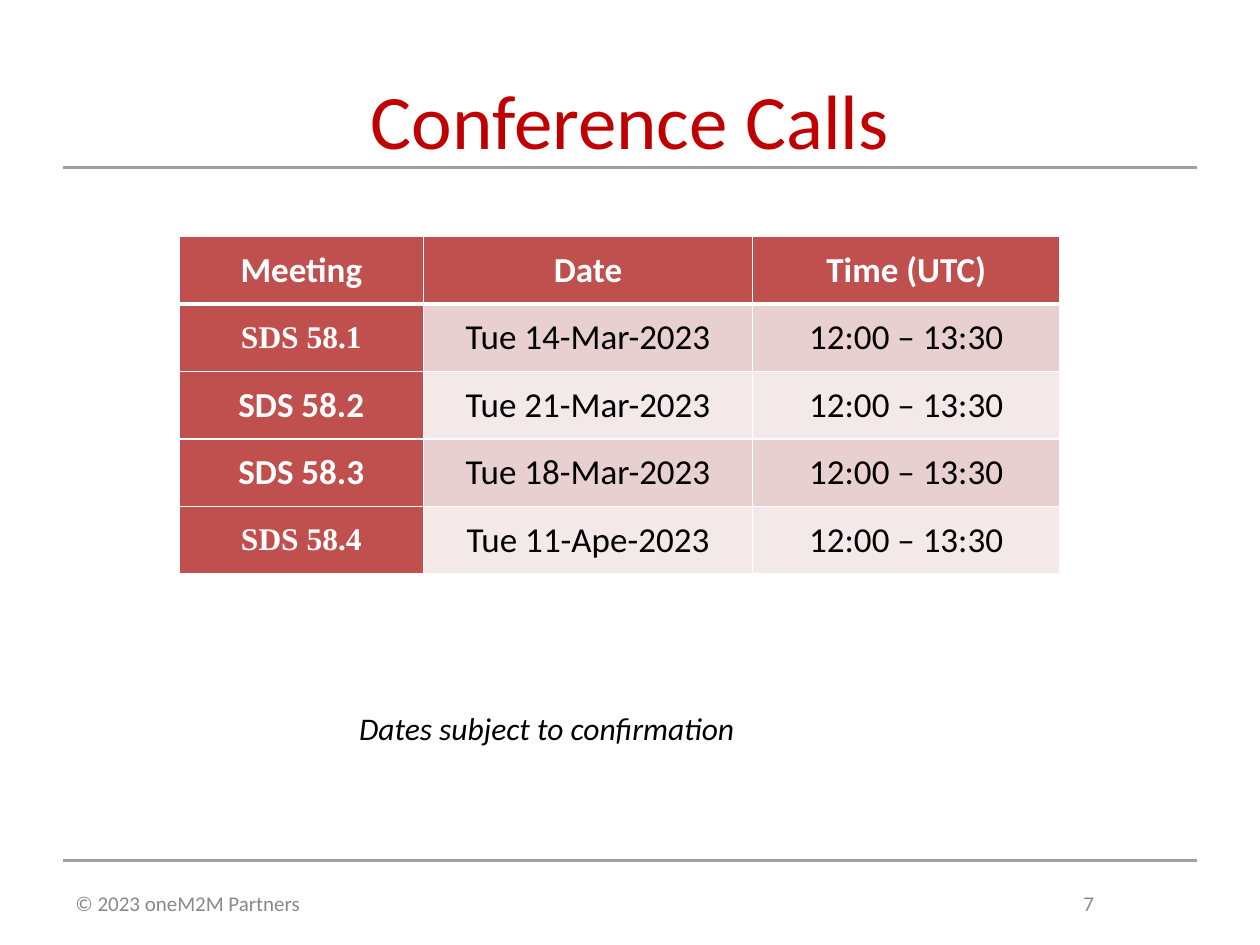
from dataclasses import dataclass

from lxml.etree import SubElement
from pptx import Presentation
from pptx.dml.color import RGBColor
from pptx.enum.shapes import MSO_CONNECTOR as Connector
from pptx.enum.text import MSO_ANCHOR as Anchor, MSO_AUTO_SIZE as AutoSize, PP_ALIGN as Align
from pptx.oxml.ns import qn
from pptx.util import Cm, Pt


@dataclass(frozen=True)
class Theme:
    font: str = "Calibri"
    serif: str = "Times New Roman"
    title: str = "C00000"
    rule: str = "A0A0A3"
    footer: str = "898989"
    accent: str = "C0504D"
    bands: tuple = ("E8D0D0", "F4E9E9")
    white: str = "FFFFFF"
    black: str = "000000"
    title_size: int = 44
    table_size: int = 20
    note_size: int = 18
    footer_size: int = 12


@dataclass(frozen=True)
class Call:
    meeting: str
    date: str
    time: str = "12:00 – 13:30"
    serif: bool = False


THEME = Theme()
HEADINGS = ("Meeting", "Date", "Time (UTC)")
CALLS = (
    Call("SDS 58.1", "Tue 14-Mar-2023", serif=True),
    Call("SDS 58.2", "Tue 21-Mar-2023"),
    Call("SDS 58.3", "Tue 18-Mar-2023"),
    Call("SDS 58.4", "Tue 11-Ape-2023", serif=True),
)
COLUMN_WIDTHS = (4.93, 6.63, 6.2)
ROW_HEIGHT = 1.36
MARGIN = 1.27
CONTENT_WIDTH = 22.86


def style(para, size: int, color: str, name: str = THEME.font,
          bold: bool = False, italic: bool = False) -> None:
    font = para.font
    font.name, font.size, font.bold, font.italic = name, Pt(size), bold, italic
    font.color.rgb = RGBColor.from_string(color)


def add_rule(slide, top: float) -> None:
    rule = slide.shapes.add_connector(
        Connector.STRAIGHT, Cm(MARGIN), Cm(top), Cm(MARGIN + CONTENT_WIDTH), Cm(top))
    rule.line.color.rgb = RGBColor.from_string(THEME.rule)
    rule.line.width = Pt(1.75)
    SubElement(rule._element.spPr, qn("a:effectLst"))


def add_borders(cell, bottom: float) -> None:
    properties = cell._tc.get_or_add_tcPr()
    for side, width in (("L", 1), ("R", 1), ("T", 1), ("B", bottom)):
        border = SubElement(properties, qn(f"a:ln{side}"), w=str(Pt(width)))
        fill = SubElement(border, qn("a:solidFill"))
        SubElement(fill, qn("a:srgbClr"), val=THEME.white)


def fill_cell(cell, text: str, fill: str, color: str, serif: bool = False,
              bold: bool = False, bottom: float = 1) -> None:
    cell.text = text
    cell.vertical_anchor = Anchor.MIDDLE
    cell.margin_left = cell.margin_right = Cm(0.18)
    cell.margin_top = cell.margin_bottom = 0
    para = cell.text_frame.paragraphs[0]
    para.alignment = Align.CENTER
    if serif:
        style(para, THEME.note_size, color, THEME.serif, bold)
    else:
        style(para, THEME.table_size, color, bold=bold)
    # Borders must come before the fill in the cell properties
    add_borders(cell, bottom)
    cell.fill.solid()
    cell.fill.fore_color.rgb = RGBColor.from_string(fill)


def add_calls_table(slide) -> None:
    table = slide.shapes.add_table(
        len(CALLS) + 1, len(HEADINGS), Cm(3.61), Cm(4.77),
        Cm(sum(COLUMN_WIDTHS)), Cm(ROW_HEIGHT * (len(CALLS) + 1))).table
    table.first_col = True
    for column, width in zip(table.columns, COLUMN_WIDTHS):
        column.width = Cm(width)
    for row in table.rows:
        row.height = Cm(ROW_HEIGHT)

    for index, heading in enumerate(HEADINGS):
        fill_cell(table.cell(0, index), heading, THEME.accent, THEME.white,
                  bold=True, bottom=3)
    for index, call in enumerate(CALLS):
        row = index + 1
        fill_cell(table.cell(row, 0), call.meeting, THEME.accent, THEME.white,
                  serif=call.serif, bold=True)
        for column, text in enumerate((call.date, call.time), start=1):
            fill_cell(table.cell(row, column), text, THEME.bands[index % 2], THEME.black)


def add_title(slide, text: str) -> None:
    title = slide.shapes.title
    title.left, title.top = Cm(MARGIN), Cm(MARGIN)
    title.width, title.height = Cm(CONTENT_WIDTH), Cm(3.18)
    frame = title.text_frame
    frame.text = text
    frame.vertical_anchor = Anchor.TOP
    frame.margin_top = Cm(0.2)
    para = frame.paragraphs[0]
    para.alignment = Align.CENTER
    style(para, THEME.title_size, THEME.title)


def add_note(slide, text: str) -> None:
    frame = slide.shapes.add_textbox(Cm(6.99), Cm(14.17), Cm(8.26), Cm(1.02)).text_frame
    frame.word_wrap = False
    frame.auto_size = AutoSize.SHAPE_TO_FIT_TEXT
    frame.text = text
    style(frame.paragraphs[0], THEME.note_size, THEME.black, italic=True)


def add_footer(slide, notice: str, number: int) -> None:
    frame = slide.shapes.add_textbox(
        Cm(MARGIN), Cm(17.35), Cm(CONTENT_WIDTH), Cm(1.7)).text_frame
    frame.word_wrap = True
    frame.vertical_anchor = Anchor.MIDDLE
    frame.text = f"{notice}\t{number}"
    para = frame.paragraphs[0]
    # The tab stop places the page number near the right edge
    tabs = SubElement(para._p.get_or_add_pPr(), qn("a:tabLst"))
    SubElement(tabs, qn("a:tab"), pos=str(Cm(20.32)), algn="l")
    style(para, THEME.footer_size, THEME.footer)


def main() -> None:
    deck = Presentation()
    deck.slide_width, deck.slide_height = Cm(25.4), Cm(19.05)
    slide = deck.slides.add_slide(deck.slide_layouts[5])

    # Rules above the footer and below the title
    for top in (17.35, 3.38):
        add_rule(slide, top)

    add_title(slide, "Conference Calls")
    add_footer(slide, "© 2023 oneM2M Partners", 7)
    add_calls_table(slide)
    add_note(slide, "Dates subject to confirmation")
    deck.save("out.pptx")


if __name__ == "__main__":
    main()
